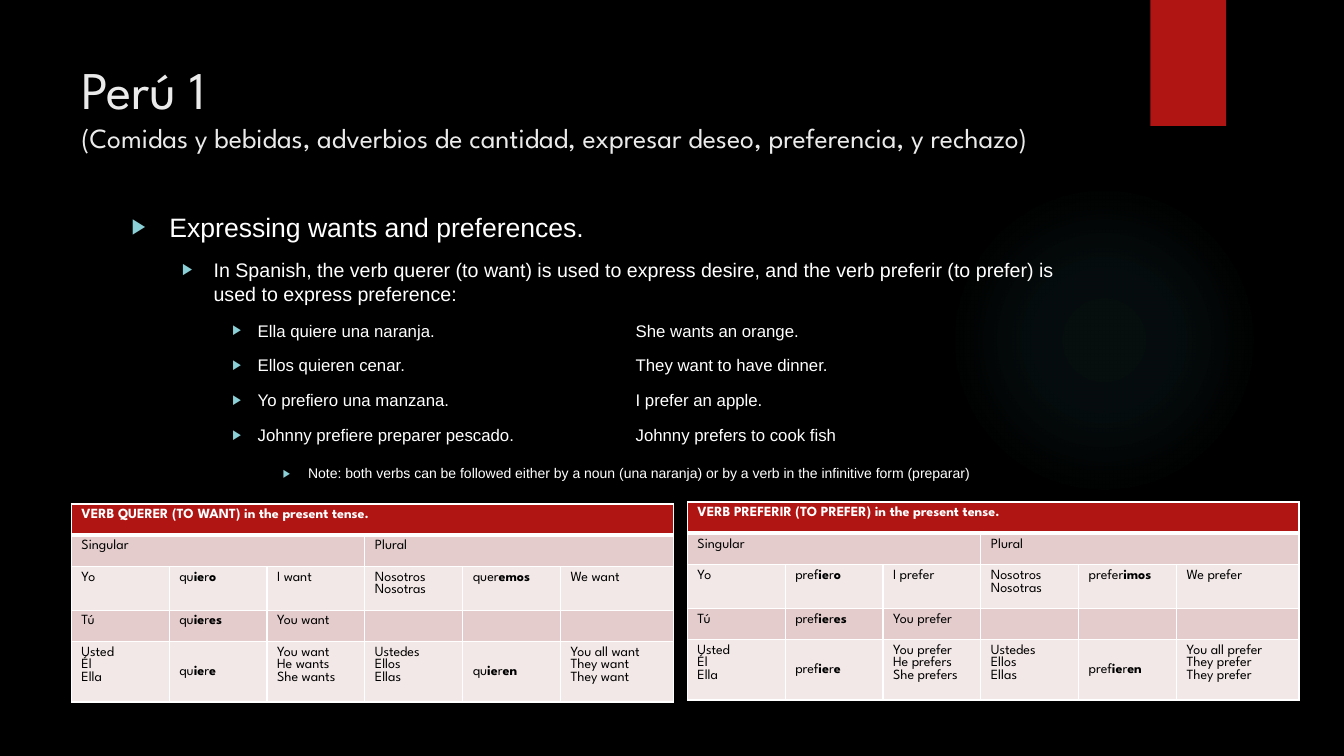
from lxml.etree import SubElement
from pptx import Presentation
from pptx.dml.color import RGBColor
from pptx.enum.shapes import MSO_SHAPE as Preset
from pptx.enum.text import MSO_ANCHOR as Anchor
from pptx.oxml.ns import qn
from pptx.util import Pt

BLACK = RGBColor(0x00, 0x00, 0x00)
WHITE = RGBColor(0xFF, 0xFF, 0xFF)
SOFT_WHITE = RGBColor(0xEB, 0xEB, 0xEB)
RED = RGBColor(0xB0, 0x15, 0x13)
ROSE = RGBColor(0xE4, 0xCC, 0xCC)
PALE_ROSE = RGBColor(0xF2, 0xE8, 0xE7)
TEAL = RGBColor(0x50, 0xB9, 0xC1)
LIGHT_TEAL = RGBColor(0x8A, 0xD0, 0xD6)

TITLE = {"name": "League Spartan", "size": Pt(37.8)}
SUBTITLE = {"name": "League Spartan", "size": Pt(19.8)}
CELL = {"name": "League Spartan", "size": Pt(10)}
LEVELS = [
    {"left": 27, "hang": 27, "size": 19, "before": 0},
    {"left": 58.5, "hang": 22.5, "size": 14, "before": 10},
    {"left": 90, "hang": 18, "size": 12, "before": 10},
    {"left": 126, "hang": 18, "size": 10, "before": 13.5},
]
ENGLISH_TAB = 360
ROW_HEIGHTS = [22.3, 22.3, 31, 22.3, 43.2]
COLUMN_WIDTH = 69.9

LESSON = [
    (0, "Expressing wants and preferences."),
    (1, "In Spanish, the verb querer (to want) is used to express desire, "
        "and the verb preferir (to prefer) is used to express preference:"),
    (2, "Ella quiere una naranja.\tShe wants an orange."),
    (2, "Ellos quieren cenar.\tThey want to have dinner."),
    (2, "Yo prefiero una manzana.\tI prefer an apple."),
    (2, "Johnny prefiere preparer pescado.\tJohnny prefers to cook fish"),
    (3, "Note: both verbs can be followed either by a noun (una naranja) "
        "or by a verb in the infinitive form (preparar)"),
]


def add_run(paragraph, text, color, formats):
    """Append a run that carries the given font formats."""
    run = paragraph.add_run()
    run.text = text
    run.font.color.rgb = color
    for attribute, value in formats.items():
        setattr(run.font, attribute, value)


def add_color(parent, color, alpha=None):
    """Append an RGB colour element, translucent if alpha is given."""
    rgb = SubElement(parent, qn("a:srgbClr"), val=str(color))
    if alpha is not None:
        SubElement(rgb, qn("a:alpha"), val=str(alpha * 1000))


def add_backdrop(slide, left, top, size):
    """Draw the faint round glow."""
    glow = slide.shapes.add_shape(Preset.OVAL, Pt(left), Pt(top), Pt(size), Pt(size))
    glow.shadow.inherit = False
    glow.line.fill.background()
    glow.fill.gradient()
    gradient = glow.fill._xPr.find(qn("a:gradFill"))
    for child in list(gradient):
        gradient.remove(child)
    stops = SubElement(gradient, qn("a:gsLst"))
    for position, alpha in ((0, 7), (36, 6), (69, 0), (100, 0)):
        add_color(SubElement(stops, qn("a:gs"), pos=str(position * 1000)), TEAL, alpha)
    circle = SubElement(gradient, qn("a:path"), path="circle")
    SubElement(circle, qn("a:fillToRect"), l="50000", t="50000", r="50000", b="50000")


def add_ribbon(slide, left, top, width, height):
    """Draw the red ribbon that hangs from the top edge."""
    ribbon = slide.shapes.add_shape(Preset.RECTANGLE, Pt(left), Pt(top), Pt(width), Pt(height))
    ribbon.shadow.inherit = False
    ribbon.fill.solid()
    ribbon.fill.fore_color.rgb = RED
    ribbon.line.fill.background()


def add_heading(slide, left, top, width, height):
    """Write the title with its subtitle on the next line."""
    frame = slide.shapes.add_textbox(Pt(left), Pt(top), Pt(width), Pt(height)).text_frame
    frame.word_wrap = True
    frame.margin_top = Pt(26)
    heading = frame.paragraphs[0]
    heading.line_spacing = Pt(24)
    add_run(heading, "Perú 1", SOFT_WHITE, TITLE)
    heading.add_line_break()
    add_run(heading, "(Comidas y bebidas, adverbios de cantidad, expresar deseo, "
            "preferencia, y rechazo)", SOFT_WHITE, SUBTITLE)


def add_lesson(slide, left, top, width, height):
    """Write the bulleted explanation and its examples."""
    frame = slide.shapes.add_textbox(Pt(left), Pt(top), Pt(width), Pt(height)).text_frame
    frame.word_wrap = True
    for index, (depth, text) in enumerate(LESSON):
        level = LEVELS[depth]
        point = frame.paragraphs[0] if index == 0 else frame.add_paragraph()
        point.level = depth
        properties = point._p.get_or_add_pPr()
        properties.set("marL", str(Pt(level["left"])))
        properties.set("indent", str(-Pt(level["hang"])))
        add_color(SubElement(properties, qn("a:buClr")), LIGHT_TEAL)
        SubElement(properties, qn("a:buSzPct"), val="80000")
        SubElement(properties, qn("a:buFont"), typeface="Arial")
        SubElement(properties, qn("a:buChar"), char="▶")
        if "\t" in text:
            tabs = SubElement(properties, qn("a:tabLst"))
            SubElement(tabs, qn("a:tab"), pos=str(Pt(ENGLISH_TAB)), algn="l")
        point.space_before = Pt(level["before"])
        point.line_spacing = 1.04
        add_run(point, text, WHITE, {"name": "Arial", "size": Pt(level["size"])})


def fill_cell(cell, text, row):
    """Style one table cell and write its text, with bold between asterisks."""
    properties = cell._tc.get_or_add_tcPr()
    weights = {"a:lnL": 1, "a:lnR": 1, "a:lnT": 3 if row == 1 else 1, "a:lnB": 3 if row == 0 else 1}
    for side, weight in weights.items():
        border = SubElement(properties, qn(side), w=str(Pt(weight)))
        add_color(SubElement(border, qn("a:solidFill")), WHITE)
    cell.fill.solid()
    cell.fill.fore_color.rgb = RED if row == 0 else ROSE if row % 2 else PALE_ROSE
    if row == 4 and "*" in text:
        cell.vertical_anchor = Anchor.MIDDLE
    for index, line in enumerate(text.split("\n")):
        paragraph = cell.text_frame.paragraphs[0] if index == 0 else cell.text_frame.add_paragraph()
        if not line:
            SubElement(paragraph._p, qn("a:endParaRPr"), sz="1000")
            continue
        for part, piece in enumerate(line.split("*")):
            if piece:
                bold = row == 0 or part % 2 == 1
                add_run(paragraph, piece, BLACK if row else WHITE, {**CELL, "bold": bold})


def add_conjugation(slide, left, top, width, infinitive, english, stem, we_form):
    """Build the present tense table of one verb."""
    rows = [
        [f"VERB {infinitive} (TO {english.upper()}) in the present tense.", "", "", "", "", ""],
        ["Singular", "", "", "Plural", "", ""],
        ["Yo", f"{stem}*ie*r*o*", f"I {english}", "Nosotros\nNosotras", we_form, f"We {english}"],
        ["Tú", f"{stem}*ie*r*es*", f"You {english}", "", "", ""],
        ["Usted\nÉl\nElla", f"{stem}*ie*r*e*", f"You {english}\nHe {english}s\nShe {english}s",
         "Ustedes\nEllos\nEllas", f"{stem}*ie*r*en*",
         f"You all {english}\nThey {english}\nThey {english}"],
    ]
    table = slide.shapes.add_table(5, 6, Pt(left), Pt(top), Pt(width), Pt(sum(ROW_HEIGHTS))).table
    for index, column in enumerate(table.columns):
        column.width = Pt(COLUMN_WIDTH if index < 5 else width - 5 * COLUMN_WIDTH)
    for index, height in enumerate(ROW_HEIGHTS):
        table.rows[index].height = Pt(height)
    for row, first, last in ((0, 0, 5), (1, 0, 2), (1, 3, 5)):
        table.cell(row, first).merge(table.cell(row, last))
    for row, texts in enumerate(rows):
        for column, text in enumerate(texts):
            fill_cell(table.cell(row, column), text, row)


def main():
    """Build the slide and save it."""
    deck = Presentation()
    deck.slide_width, deck.slide_height = Pt(960), Pt(540)
    slide = deck.slides.add_slide(deck.slide_layouts[6])
    slide.background.fill.solid()
    slide.background.fill.fore_color.rgb = BLACK
    add_backdrop(slide, 677.5, 131.8, 221.8)
    add_ribbon(slide, 821.8, 0, 54, 90)
    add_heading(slide, 51, 36, 865.5, 110)
    add_lesson(slide, 87, 146, 704, 346)
    add_conjugation(slide, 51, 360, 430.5, "QUERER", "want", "qu", "quer*emos*")
    add_conjugation(slide, 491, 358.6, 437, "PREFERIR", "prefer", "pref", "prefer*imos*")
    deck.save("out.pptx")


if __name__ == "__main__":
    main()
